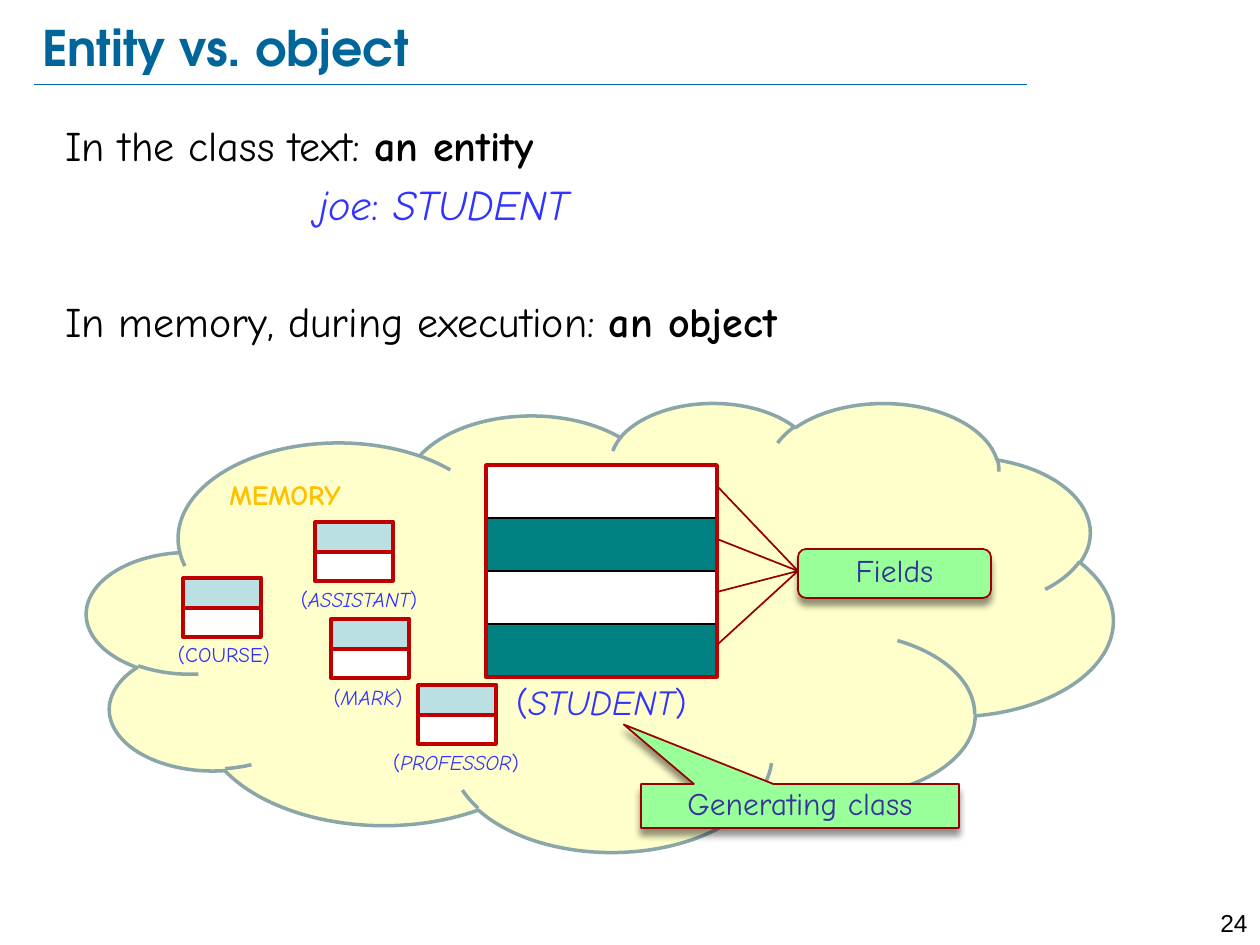
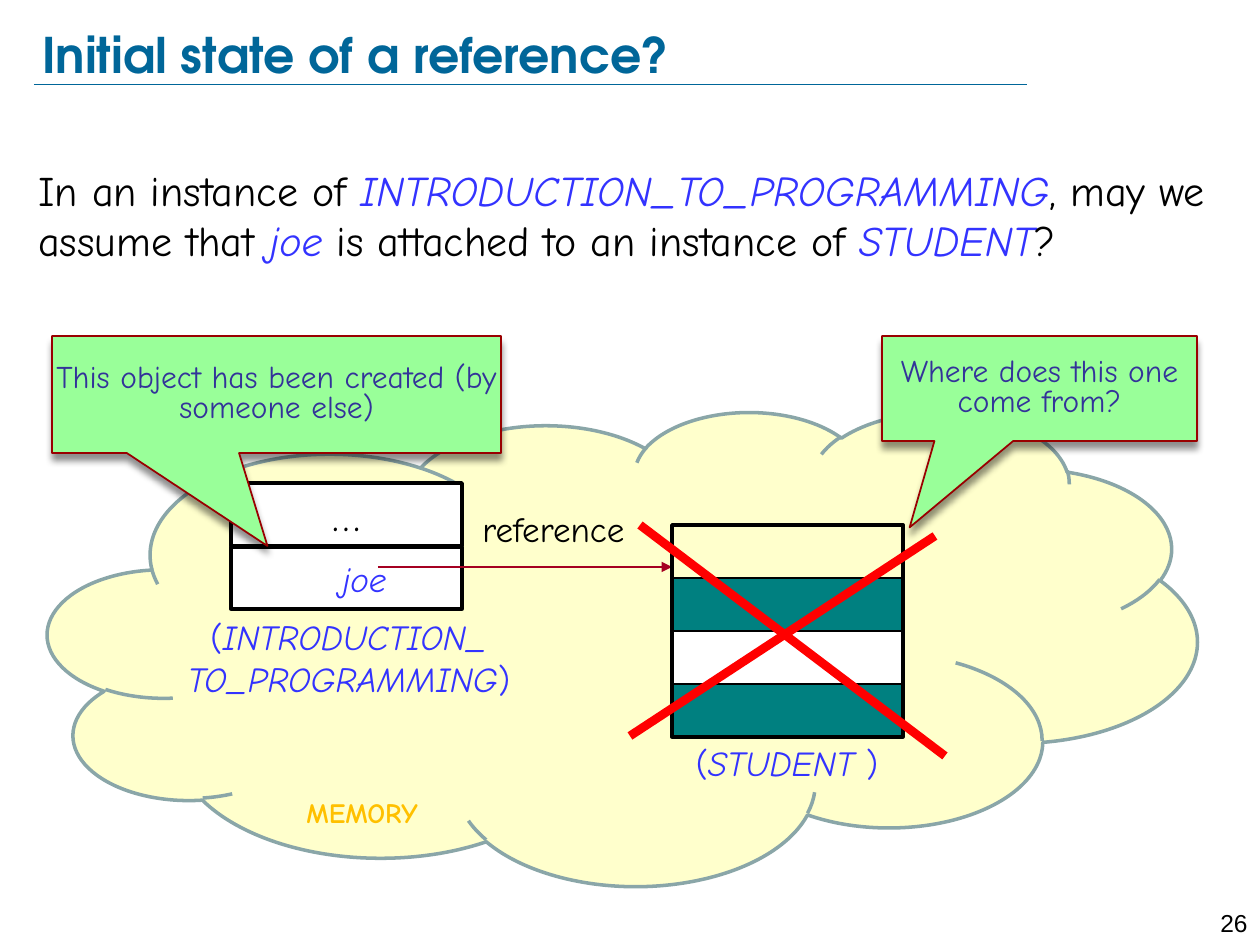
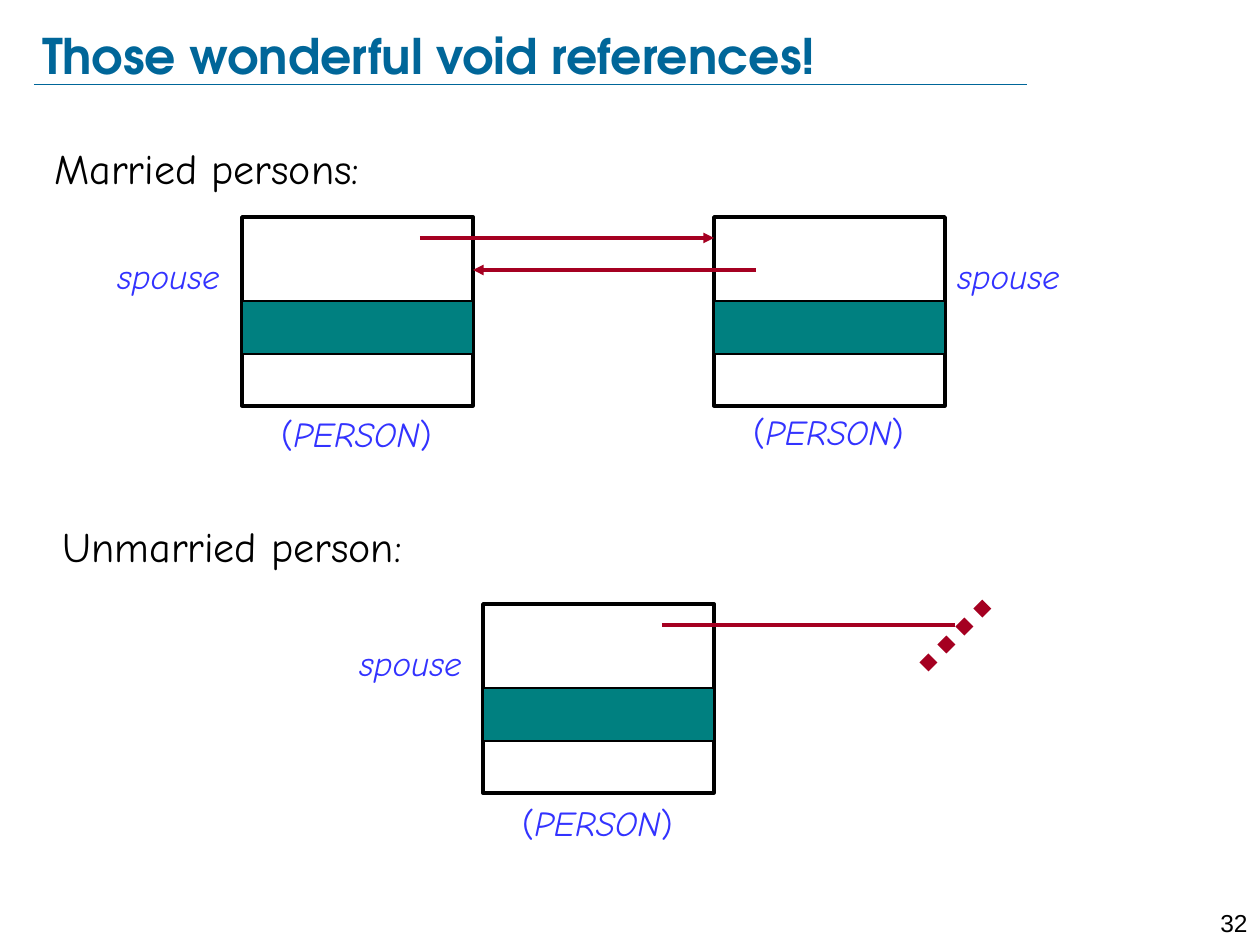
from lxml import etree
from pptx import Presentation
from pptx import util as u
from pptx.dml.color import RGBColor
from pptx.enum import dml, shapes, text
from pptx.oxml.ns import qn

PX = 914400 // 126
WIDTH, HEIGHT = 1260, 945

BLACK, WHITE, TITLE, BLUE = "000000", "FFFFFF", "006699", "3333FF"
TEAL, PALE, CLOUD, CLOUD_EDGE = "008080", "BBE0E3", "FFFFCC", "8AA6A8"
GREEN, NAVY, DARK_RED, CARD_RED = "99FF99", "333399", "990000", "C00000"
ARROW, CROSS, GOLD = "A50021", "FF0000", "FFC000"
BODY_FONT, TITLE_FONT, NUMBER_FONT = "Comic Neue", "TeX Gyre Adventor", "Arial"

# Span styles: colour, bold, italic
STYLES = {
    "plain": (BLACK, False, False), "strong": (BLACK, True, False),
    "code": (BLUE, False, True), "mark": (BLUE, False, False),
    "title": (TITLE, True, False), "memory": (GOLD, True, False),
    "note": (NAVY, False, False),
}
LEFT, CENTER, RIGHT = (text.PP_ALIGN.LEFT, text.PP_ALIGN.CENTER, text.PP_ALIGN.RIGHT)
OBJECT_WIDTH, ROW = 231, 53

# Content: (title, title middle, page number)
HEADINGS = [
    ("Entity vs. object", 47, 24),
    ("Initial state of a reference?", 54, 26),
    ("Those wonderful void references!", 55, 32),
]
# Paragraphs: (spans, indent in px, space before in points)
ENTITY_TEXT = [
    ([("In the class text: ", "plain"), ("an entity", "strong")], 0, 0),
    ([("joe", "code"), (":", "mark"), (" STUDENT", "code")], 252, 4.8),
    ([("In memory, during execution: ", "plain"), ("an object", "strong")], 0, 38.5),
]
REFERENCE_TEXT = [
    ([("In an instance of ", "plain"), ("INTRODUCTION_TO_PROGRAMMING", "code"),
      (", may we assume that ", "plain"), ("joe ", "code"),
      ("is attached to an instance of ", "plain"), ("STUDENT", "code"),
      ("?", "plain")], 0, 0),
]
# Small objects: class, style, card corner, label corner
CARDS = [
    ("COURSE", "mark", (183, 578), (139, 635)),
    ("ASSISTANT", "code", (315, 522), (274, 580)),
    ("MARK", "code", (331, 619), (283, 678)),
    ("PROFESSOR", "code", (418, 685), (371, 743)),
]
# Persons: object corner, spouse label left, class label top
PERSONS = [
    ((242, 217), 105, 406),
    ((714, 217), 945, 404),
    ((483, 604), 347, 795),
]
STATES = [("Married persons:", 42, 136), ("Unmarried person:", 50, 514)]


def rgb(value):
    return RGBColor.from_string(value)


def emu(*lengths):
    return [round(length * PX) for length in lengths]


def write(frame, paragraphs, size, align=LEFT, font=BODY_FONT):
    for index, (spans, indent, before) in enumerate(paragraphs):
        para = frame.paragraphs[0] if index == 0 else frame.add_paragraph()
        para.alignment = align
        if indent:
            para._p.get_or_add_pPr().set("marL", str(indent * PX))
        if before:
            para.space_before = u.Pt(before)
        for words, style in spans:
            span = para.add_run()
            span.text = words
            color, span.font.bold, span.font.italic = STYLES[style]
            span.font.color.rgb = rgb(color)
            span.font.size, span.font.name = u.Pt(size), font


def add_text(page, place, paragraphs, size, align=LEFT, font=BODY_FONT):
    frame = page.shapes.add_textbox(*emu(*place)).text_frame
    frame.word_wrap = True
    write(frame, paragraphs, size, align, font)
    return frame


def add_label(page, place, words, style="code", size=20, align=LEFT):
    return add_text(page, place, [([(words, style)], 0, 0)], size, align)


def add_class(page, place, name, style="code", size=20):
    spans = [("(", "mark"), (name, style), (")", "mark")]
    add_text(page, place, [(spans, 0, 0)], size, CENTER)


def add_box(page, place, fill, line, weight, kind="RECTANGLE"):
    box = page.shapes.add_shape(getattr(shapes.MSO_SHAPE, kind), *emu(*place))
    box.shadow.inherit = False
    if fill:
        box.fill.solid()
        box.fill.fore_color.rgb = rgb(fill)
    else:
        box.fill.background()
    box.line.color.rgb = rgb(line)
    box.line.width = u.Pt(weight)
    return box


def add_line(page, start, end, color, weight, arrow=False):
    line = page.shapes.add_connector(shapes.MSO_CONNECTOR.STRAIGHT, *emu(*start, *end))
    line.line.color.rgb = rgb(color)
    line.line.width = u.Pt(weight)
    if arrow:
        etree.SubElement(line.line._get_or_add_ln(), qn("a:tailEnd"), type="triangle")
    etree.SubElement(line._element.spPr, qn("a:effectLst"))
    return line


def add_note(page, place, words, kind="RECTANGULAR_CALLOUT", tip=()):
    note = add_box(page, place, GREEN, DARK_RED, 1, kind)
    for index, value in enumerate(tip):
        note.adjustments[index] = value
    effects = note._element.spPr.find(qn("a:effectLst"))
    shadow = etree.SubElement(effects, qn("a:outerShdw"), blurRad="50800",
                              dist="50800", dir="5400000", rotWithShape="0")
    color = etree.SubElement(shadow, qn("a:srgbClr"), val=BLACK)
    etree.SubElement(color, qn("a:alpha"), val="43000")
    frame = note.text_frame
    frame.word_wrap = True
    frame.margin_left = frame.margin_right = 0
    frame.vertical_anchor = text.MSO_ANCHOR.MIDDLE
    write(frame, [([(words, "note")], 0, 0)], 18, CENTER)
    frame.paragraphs[0].line_spacing = 0.8


def add_memory(page, place, label):
    add_box(page, place, CLOUD, CLOUD_EDGE, 2, "CLOUD")
    add_label(page, (*label, 161, 47), "MEMORY", "memory", 16)


def add_student(page, left, top, fills, edge):
    for index, fill in enumerate(fills):
        if fill:
            add_box(page, (left, top + index * ROW, OBJECT_WIDTH, ROW), fill, BLACK, 0.75)
    add_box(page, (left, top, OBJECT_WIDTH, ROW * len(fills)), None, edge, 2)


def add_page(deck, title, middle, number):
    page = deck.slides.add_slide(deck.slide_layouts[6])
    add_line(page, (34, 84), (1027, 84), TITLE, 0.25)
    add_text(page, (1191, 902, 69, 30), [([(str(number), "plain")], 0, 0)],
             14, RIGHT, NUMBER_FONT)
    frame = add_text(page, (42, middle - 40, 1095, 80), [([(title, "title")], 0, 0)],
                     28, LEFT, TITLE_FONT)
    frame.margin_left = frame.margin_right = frame.margin_top = frame.margin_bottom = 0
    frame.vertical_anchor = text.MSO_ANCHOR.MIDDLE
    return page


def fill_entity(page):
    add_text(page, (53, 113, 1160, 307), ENTITY_TEXT, 24)
    add_memory(page, (87, 402, 1026, 449), (217, 471))

    # Student object and its fields
    add_student(page, 486, 465, [WHITE, TEAL] * 2, CARD_RED)
    for index in range(4):
        add_line(page, (717, 486 + index * ROW), (798, 571), DARK_RED, 1)
    add_class(page, (485, 674, 233, 55), "STUDENT")

    # Other objects
    for name, style, (left, top), label in CARDS:
        add_box(page, (left, top, 78, 59), WHITE, CARD_RED, 2)
        add_box(page, (left, top, 78, 30), PALE, CARD_RED, 2)
        add_class(page, (*label, 170, 39), name, style, 12)

    add_note(page, (798, 549, 193, 49), "Fields", "ROUNDED_RECTANGLE")
    add_note(page, (641, 784, 318, 44), "Generating class", tip=(-0.554, -1.852))


def fill_reference(page):
    add_memory(page, (48, 411, 1149, 474), (294, 789))
    add_text(page, (26, 158, 1201, 165), REFERENCE_TEXT, 24)

    # Object that holds the reference
    add_box(page, (231, 547, OBJECT_WIDTH, 62), WHITE, BLACK, 2)
    dots = add_box(page, (231, 483, OBJECT_WIDTH, 63), WHITE, BLACK, 2).text_frame
    dots.vertical_anchor = text.MSO_ANCHOR.MIDDLE
    write(dots, [([("…", "plain")], 0, 0)], 24, CENTER)
    add_line(page, (378, 567), (672, 567), ARROW, 1.5, arrow=True)
    add_label(page, (291, 551, 108, 55), "joe", align=RIGHT)
    add_label(page, (470, 501, 199, 55), "reference", "plain")
    add_class(page, (150, 609, 398, 98), "INTRODUCTION_ TO_PROGRAMMING")

    # Crossed-out student
    add_student(page, 672, 525, [None, TEAL, WHITE, TEAL], BLACK)
    add_class(page, (663, 735, 248, 55), "STUDENT ")
    add_line(page, (640, 525), (945, 756), CROSS, 5)
    add_line(page, (630, 736), (935, 536), CROSS, 5)

    add_note(page, (882, 336, 315, 105), "Where does this one come from?",
             tip=(-0.412, 1.323))
    add_note(page, (52, 336, 449, 117), "This object has been created (by someone else)",
             tip=(-0.02, 1.295))


def fill_void(page):
    for words, left, top in STATES:
        add_label(page, (left, top, 1176, 63), words, "plain", 24)
    for (left, top), spouse_left, class_top in PERSONS:
        add_box(page, (left, top, OBJECT_WIDTH, 189), None, BLACK, 2)
        add_box(page, (left, top + 84, OBJECT_WIDTH, ROW), TEAL, BLACK, 0.75)
        add_label(page, (spouse_left, top + 31, 168, 55), "spouse")
        add_class(page, (left - 2, class_top, 233, 55), "PERSON")

    # Mutual references, then the void one
    add_line(page, (420, 238), (714, 238), ARROW, 2, arrow=True)
    add_line(page, (756, 270), (473, 270), ARROW, 2, arrow=True)
    add_line(page, (662, 625), (955, 625), ARROW, 2)
    void = add_line(page, (924, 667), (987, 604), ARROW, 7.25)
    void.line.dash_style = dml.MSO_LINE.ROUND_DOT


def main():
    deck = Presentation()
    deck.slide_width, deck.slide_height = emu(WIDTH, HEIGHT)
    for heading, fill_page in zip(HEADINGS, (fill_entity, fill_reference, fill_void)):
        fill_page(add_page(deck, *heading))
    deck.save("out.pptx")


if __name__ == "__main__":
    main()
